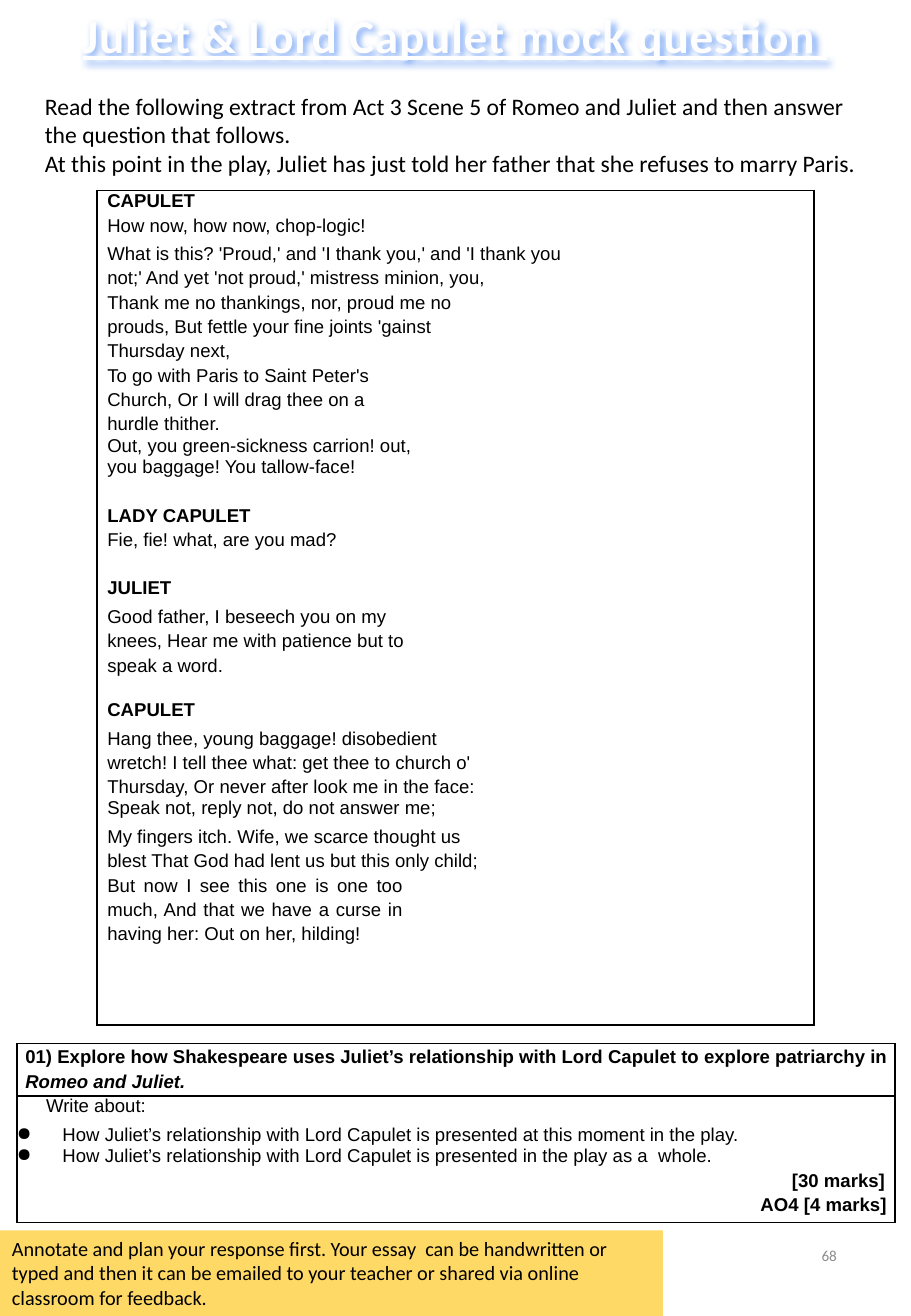
from lxml import etree
from pptx import Presentation
from pptx.dml.color import RGBColor
from pptx.enum import shapes, text
from pptx.oxml import ns
from pptx.util import Pt

TITLE = "Juliet & Lord Capulet mock question "
INTRO = [
    "Read the following extract from Act 3 Scene 5 of Romeo and Juliet and then answer the question that follows.",
    "At this point in the play, Juliet has just told her father that she refuses to marry Paris.",
]
REMINDER = [
    "Annotate and plan your response first. Your essay  can be handwritten or typed and then it can be "
    "emailed to your teacher or shared via online classroom for feedback."
]
PAGE_NUMBER = ["68"]

# Each line: runs as (words, style), then paragraph settings in points
SPEECH = dict(left=6, spacing=1.18)
EXTRACT = [
    ([("CAPULET", "b")], dict(left=6, before=5.4)),
    ([("How now, how now, chop-logic!", "")], dict(left=6, before=2.4)),
    ([("What is this? 'Proud,' and 'I thank you,' and 'I thank you not;' And yet 'not proud,' "
       "mistress minion, you,", "")], dict(SPEECH, before=2.4, right=135)),
    ([("Thank me no thankings, nor, proud me no prouds, But fettle your fine joints 'gainst "
       "Thursday next,", "")], dict(SPEECH, right=197)),
    ([("To go with Paris to Saint Peter's Church, Or I will drag thee on a hurdle thither.", "")],
     dict(SPEECH, right=245)),
    ([("Out, you green-sickness carrion! out, you baggage! You tallow-face!", "")],
     dict(left=6, spacing=Pt(12.6), right=228)),
    ([("LADY CAPULET", "b")], dict(left=6, before=16.6)),
    ([("Fie, fie! what, are you mad?", "")], dict(left=6, before=2.4)),
    ([("JULIET", "b")], dict(left=6, before=16.2)),
    ([("Good father, I beseech you on my knees, Hear me with patience but to speak a word.", "")],
     dict(SPEECH, before=2.4, right=227)),
    ([("CAPULET", "b")], dict(left=6, before=14.3)),
    ([("Hang thee, young baggage! disobedient wretch! I tell thee what: get thee to church o' "
       "Thursday, Or never after look me in the face:", "")], dict(SPEECH, before=2.4, right=200)),
    ([("Speak not, reply not, do not answer me;", "")], dict(left=6, spacing=Pt(12.5))),
    ([("My fingers itch. Wife, we scarce thought us blest That God had lent us but this only child;", "")],
     dict(SPEECH, before=2.4, right=191)),
    ([("But now I see this one is one too much, And that we have a curse in having her: "
       "Out on her, hilding!", "")], dict(SPEECH, right=243.5, align=text.PP_ALIGN.JUSTIFY)),
]
QUESTION = [
    ([("01) Explore how Shakespeare uses Juliet’s relationship with Lord Capulet to explore patriarchy in ", "b"),
      ("Romeo and Juliet.", "bi")], dict(left=5, spacing=1.18, before=5.4)),
]
BULLET = dict(left=27, hanging=27, bullet="●")
MARKS = dict(before=2.4, align=text.PP_ALIGN.RIGHT)
GUIDANCE = [
    ([("Write about:", "")], dict(left=17.3, before=5.4)),
    ([("How Juliet’s relationship with Lord Capulet is presented at this moment in the play.", "")],
     dict(BULLET, spacing=1.18, before=2.4)),
    ([("How Juliet’s relationship with Lord Capulet is presented in the play as a  whole.", "")],
     dict(BULLET, spacing=Pt(12.6))),
    ([("[30 marks]", "b")], dict(MARKS, right=6)),
    ([("AO4 [4 marks]", "b")], dict(MARKS, right=5)),
]


def colour(value):
    return RGBColor.from_string(value)


def style_run(run, font, size, fill="000000"):
    run.font.name = font
    run.font.size = Pt(size)
    run.font.color.rgb = colour(fill)


def write_lines(frame, lines, size, fill="000000", align=text.PP_ALIGN.LEFT):
    frame.word_wrap = True
    frame.text = "\n".join(lines)
    for paragraph in frame.paragraphs:
        paragraph.alignment = align
        for run in paragraph.runs:
            style_run(run, "Calibri", size, fill)


def add_box(slide, box, lines, size, **style):
    shape = slide.shapes.add_textbox(*map(Pt, box))
    write_lines(shape.text_frame, lines, size, **style)
    return shape


def format_paragraph(paragraph, left=0, right=0, before=0, spacing=1.0, hanging=0,
                     bullet=None, align=text.PP_ALIGN.LEFT):
    paragraph.alignment = align
    paragraph.line_spacing = spacing
    paragraph.space_before = Pt(before)
    properties = paragraph._p.get_or_add_pPr()
    for name, value in (("marL", left), ("marR", right), ("indent", -hanging)):
        properties.set(name, str(int(Pt(value))))
    if bullet:
        etree.SubElement(properties, ns.qn("a:buChar")).set("char", bullet)


def fill_cell(cell, paragraphs):
    cell.margin_left = cell.margin_right = cell.margin_top = cell.margin_bottom = 0
    for index, (runs, settings) in enumerate(paragraphs):
        frame = cell.text_frame
        paragraph = frame.paragraphs[0] if index == 0 else frame.add_paragraph()
        format_paragraph(paragraph, **settings)
        for words, style in runs:
            run = paragraph.add_run()
            run.text = words
            style_run(run, "Arial", 11)
            run.font.bold = "b" in style
            run.font.italic = "i" in style
    # Borders come before the fill in the cell properties
    properties = cell._tc.get_or_add_tcPr()
    for side in ("lnL", "lnR", "lnT", "lnB"):
        line = etree.SubElement(properties, ns.qn("a:" + side), w=str(int(Pt(1))))
        solid = etree.SubElement(line, ns.qn("a:solidFill"))
        etree.SubElement(solid, ns.qn("a:srgbClr"), val="000000")
    cell.fill.background()


def add_ruled_table(slide, left, top, width, rows):
    height = sum(row_height for row_height, _ in rows)
    table = slide.shapes.add_table(len(rows), 1, Pt(left), Pt(top), Pt(width), Pt(height)).table
    table.first_row = table.horz_banding = False
    for index, (row_height, paragraphs) in enumerate(rows):
        table.rows[index].height = Pt(row_height)
        fill_cell(table.cell(index, 0), paragraphs)


def add_title(slide):
    title = slide.shapes.title
    title.left, title.top, title.width, title.height = map(Pt, (19.5, 0, 500.5, 41))
    frame = title.text_frame
    write_lines(frame, [TITLE], 28, "FEFEFE", text.PP_ALIGN.CENTER)
    frame.vertical_anchor = text.MSO_ANCHOR.TOP
    frame.auto_size = text.MSO_AUTO_SIZE.NONE
    run = frame.paragraphs[0].runs[0]
    run.font.bold = run.font.underline = True
    run._r.get_or_add_rPr().set("spc", "50")
    # Soft blue shadow behind the white letters
    title.shadow.inherit = False
    effects = title._element.spPr.find(ns.qn("a:effectLst"))
    shadow = etree.SubElement(effects, ns.qn("a:outerShdw"), blurRad=str(int(Pt(4))),
                              dist=str(int(Pt(2))), dir="2700000", algn="tl", rotWithShape="0")
    tint = etree.SubElement(shadow, ns.qn("a:srgbClr"), val="6FA0F5")
    etree.SubElement(tint, ns.qn("a:alpha"), val="90000")


def main():
    presentation = Presentation()
    presentation.slide_width, presentation.slide_height = Pt(540), Pt(780)
    slide = presentation.slides.add_slide(presentation.slide_layouts[5])

    # Heading and introduction
    add_title(slide)
    add_box(slide, (19.5, 51, 500.5, 58), INTRO, 14)

    # Extract and exam question
    add_ruled_table(slide, 57.6, 113, 424.8, [(494.6, EXTRACT)])
    add_ruled_table(slide, 10, 618.5, 520.6, [(31, QUESTION), (74.5, GUIDANCE)])

    # Reminder banner and page number
    banner = slide.shapes.add_shape(shapes.MSO_SHAPE.RECTANGLE, 0, Pt(729.3), Pt(393), Pt(51))
    banner.shadow.inherit = False
    banner.fill.solid()
    banner.fill.fore_color.rgb = colour("FFD966")
    banner.line.fill.background()
    banner.text_frame.vertical_anchor = text.MSO_ANCHOR.TOP
    write_lines(banner.text_frame, REMINDER, 12)
    number = add_box(slide, (381.5, 723, 121.7, 41.8), PAGE_NUMBER, 9,
                     fill="8C8C8C", align=text.PP_ALIGN.RIGHT)
    number.text_frame.vertical_anchor = text.MSO_ANCHOR.MIDDLE

    presentation.save("out.pptx")


if __name__ == "__main__":
    main()
